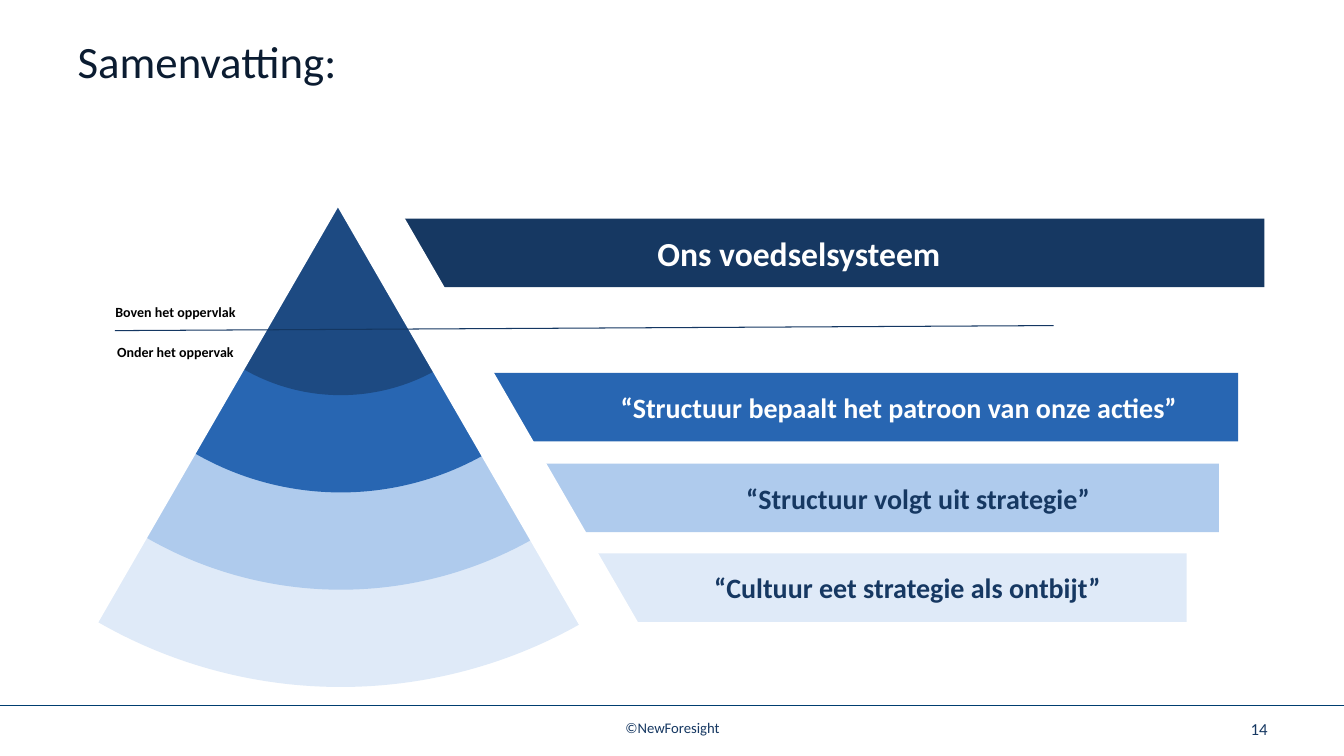
from dataclasses import dataclass
from lxml import etree
from pptx import Presentation
from pptx.dml.color import RGBColor
from pptx.enum.shapes import MSO_CONNECTOR as Connector, MSO_SHAPE as Preset
from pptx.enum.text import MSO_ANCHOR as Anchor, PP_ALIGN as Align
from pptx.oxml.ns import qn
from pptx.util import Inches, Pt


@dataclass(frozen=True)
class Theme:
    font: str = "Calibri"
    title: str = "0B1C31"
    navy: str = "163862"
    deep: str = "1D4A82"
    blue: str = "2866B2"
    light: str = "AFCBED"
    pale: str = "DFEAF8"
    white: str = "FFFFFF"
    black: str = "000000"
    rule: str = "003E70"
    surface: str = "143762"
    title_size: float = 32
    lead_size: float = 24
    bar_size: float = 20
    number_size: float = 12
    footer_size: float = 10.5
    label_size: float = 10


THEME = Theme()
TITLE = "Samenvatting:"
BARS = [
    ("Ons voedselsysteem", 3.31, 2.17, 9.23, 0.1, THEME.navy, THEME.white, THEME.lead_size),
    ("“Structuur bepaalt het patroon van onze acties”", 4.12, 3.7, 8.16, 1.53,
     THEME.blue, THEME.white, THEME.bar_size),
    ("“Structuur volgt uit strategie”", 4.75, 4.6, 7.34, 1.47,
     THEME.light, THEME.navy, THEME.bar_size),
    ("“Cultuur eet strategie als ontbijt”", 5.73, 5.49, 6.04, 0.6,
     THEME.pale, THEME.navy, THEME.bar_size),
]
BAR_HEIGHT = 0.68
LAYERS = [(5, THEME.pale), (4, THEME.light), (3, THEME.blue), (2, THEME.deep)]
APEX = (3.38, 1.99)
LAYER_STEP = 1.93
PIE_ROTATION = 234.8
PIE_ANGLES = (180.2, 248.8)
EDGES = [(2.18, 3.95, 5.43, 240), (-0.58, 3.75, 5.01, 300)]
EDGE_HEIGHT = 0.52
LINES = [(0, 7, 13.33, 7, THEME.rule), (1.14, 3.28, 10.45, 3.23, THEME.surface)]
TEXTS = [
    ("Boven het oppervlak", (0.97, 2.94, 1.54, 0.3), Align.CENTER, Anchor.MIDDLE,
     THEME.label_size, THEME.black, True),
    ("Onder het oppervak", (0.97, 3.34, 1.54, 0.3), Align.CENTER, Anchor.MIDDLE,
     THEME.label_size, THEME.black, True),
    ("©NewForesight", (4.36, 7.08, 4.62, 0.29), Align.CENTER, Anchor.TOP,
     THEME.footer_size, THEME.navy, False),
    ("14", (9.56, 7.14, 3.11, 0.18), Align.RIGHT, Anchor.MIDDLE,
     THEME.number_size, THEME.navy, False),
]


def inches(*lengths):
    return [Inches(length) for length in lengths]


def write(shape, text, size, color, align, anchor, bold=False):
    frame = shape.text_frame
    frame.text = text
    frame.word_wrap = True
    frame.vertical_anchor = anchor
    paragraph = frame.paragraphs[0]
    paragraph.alignment = align
    font = paragraph.runs[0].font
    font.name = THEME.font
    font.size = Pt(size)
    font.bold = bold
    font.color.rgb = RGBColor.from_string(color)


def add_filled(slide, preset, box, color, rotation=0):
    shape = slide.shapes.add_shape(preset, *inches(*box))
    shape.shadow.inherit = False
    shape.fill.solid()
    shape.fill.fore_color.rgb = RGBColor.from_string(color)
    shape.line.fill.background()
    shape.rotation = rotation
    return shape


def add_bar(slide, text, left, top, width, inset, fill, color, size):
    bar = add_filled(slide, Preset.RECTANGLE, (left, top, width, BAR_HEIGHT), fill)
    write(bar, text, size, color, Align.CENTER, Anchor.MIDDLE, True)
    bar.text_frame.margin_left = Inches(inset)


def add_layer(slide, steps, color):
    diameter = steps * LAYER_STEP
    left, top = (center - diameter / 2 for center in APEX)
    pie = add_filled(slide, Preset.PIE, (left, top, diameter, diameter), color, PIE_ROTATION)
    for index, angle in enumerate(PIE_ANGLES):
        pie.adjustments[index] = angle * 0.6


def add_line(slide, x1, y1, x2, y2, color):
    line = slide.shapes.add_connector(Connector.STRAIGHT, *inches(x1, y1, x2, y2))
    line.line.color.rgb = RGBColor.from_string(color)
    line.line.width = Pt(0.75)
    etree.SubElement(line._element.spPr, qn("a:effectLst"))


def add_text(slide, text, box, align, anchor, size, color, bold):
    textbox = slide.shapes.add_textbox(*inches(*box))
    write(textbox, text, size, color, align, anchor, bold)


def main():
    presentation = Presentation()
    presentation.slide_width, presentation.slide_height = inches(13.33, 7.5)
    slide = presentation.slides.add_slide(presentation.slide_layouts[5])
    title = slide.shapes.title
    title.left, title.top, title.width, title.height = inches(0.67, 0.28, 12, 0.95)
    write(title, TITLE, THEME.title_size, THEME.title, Align.LEFT, Anchor.TOP)
    for bar in BARS:
        add_bar(slide, *bar)
    for layer in LAYERS:
        add_layer(slide, *layer)
    for left, top, width, rotation in EDGES:
        add_filled(slide, Preset.RECTANGLE, (left, top, width, EDGE_HEIGHT),
                   THEME.white, rotation)
    for line in LINES:
        add_line(slide, *line)
    for text in TEXTS:
        add_text(slide, *text)
    presentation.save("out.pptx")


if __name__ == "__main__":
    main()
